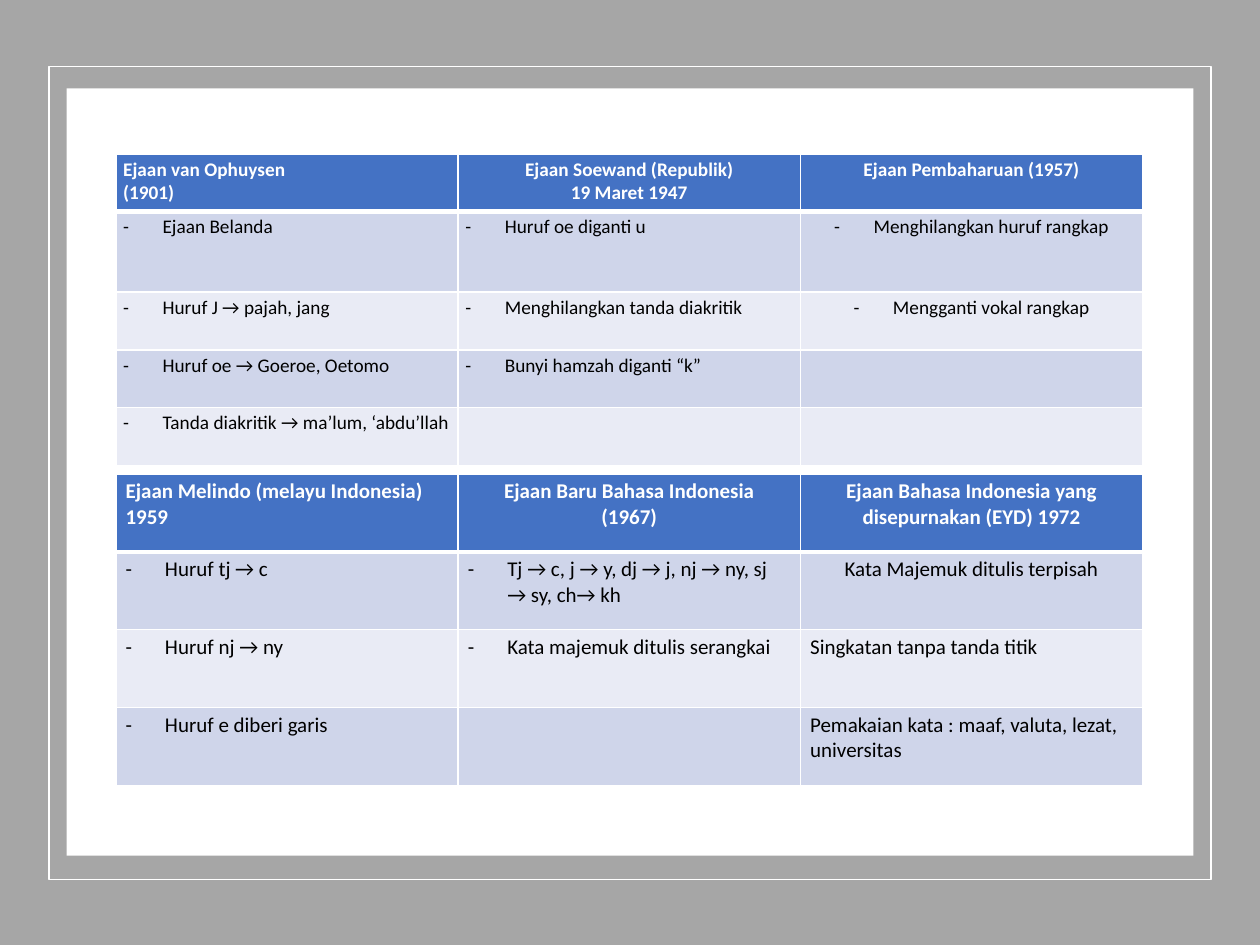
from dataclasses import dataclass

from lxml import etree
from pptx import Presentation
from pptx.dml.color import RGBColor
from pptx.enum.shapes import MSO_SHAPE
from pptx.enum.text import PP_ALIGN
from pptx.oxml.ns import qn
from pptx.util import Pt

RECT = MSO_SHAPE.RECTANGLE
LEFT, CENTER = PP_ALIGN.LEFT, PP_ALIGN.CENTER

COLORS = {
    "frame": "A6A6A6",
    "white": "FFFFFF",
    "header": "4472C4",
    "band_dark": "CFD5EA",
    "band_light": "E9EBF5",
    "text": "000000",
}
TABLE_LEFT, TABLE_WIDTH = 66.2, 586.8
INDENT = 22.5


@dataclass
class Panel:
    left: float
    top: float
    width: float
    height: float
    fill: str = ""
    line: str = ""


@dataclass
class Entry:
    text: str = ""
    align: PP_ALIGN = LEFT
    dash: bool = False


@dataclass
class SpellingTable:
    top: float
    size: float
    margin_x: float
    margin_y: float
    heights: list[float]
    rows: list[list[Entry]]


def dash(text: str, align: PP_ALIGN = LEFT) -> Entry:
    return Entry(text, align, True)


def rgb(name: str) -> RGBColor:
    return RGBColor.from_string(COLORS[name])


def draw_panel(s, panel: Panel) -> None:
    sp = s.shapes.add_shape(RECT, Pt(panel.left), Pt(panel.top),
                            Pt(panel.width), Pt(panel.height))
    sp.shadow.inherit = False
    if panel.fill:
        sp.fill.solid()
        sp.fill.fore_color.rgb = rgb(panel.fill)
    else:
        sp.fill.background()
    if panel.line:
        sp.line.color.rgb = rgb(panel.line)
        sp.line.width = Pt(1)
    else:
        sp.line.fill.background()


def set_borders(cell, top: float, bottom: float) -> None:
    tc_pr = cell._tc.get_or_add_tcPr()
    for side, width in {"L": 1, "R": 1, "T": top, "B": bottom}.items():
        ln = etree.SubElement(tc_pr, qn(f"a:ln{side}"), w=str(Pt(width)))
        fill = etree.SubElement(ln, qn("a:solidFill"))
        etree.SubElement(fill, qn("a:srgbClr"), val=COLORS["white"])


def add_dash(p) -> None:
    p_pr = p._p.get_or_add_pPr()
    p_pr.set("marL", str(Pt(INDENT)))
    p_pr.set("indent", str(-Pt(INDENT)))
    etree.SubElement(p_pr, qn("a:buFont"), typeface="Calibri")
    etree.SubElement(p_pr, qn("a:buChar"), char="-")


def write_entry(cell, entry: Entry, size: float, is_header: bool) -> None:
    tf = cell.text_frame
    font_format = {"name": "Calibri", "size": Pt(size), "bold": is_header}
    for i, line in enumerate(entry.text.split("\n")):
        p = tf.add_paragraph() if i else tf.paragraphs[0]
        p.alignment = entry.align
        if entry.dash:
            add_dash(p)
        if line:
            r = p.add_run()
            r.text = line
            for name, value in font_format.items():
                setattr(r.font, name, value)
            r.font.color.rgb = rgb("white" if is_header else "text")


def draw_table(s, spec_table: SpellingTable) -> None:
    rows, heights = spec_table.rows, spec_table.heights
    columns = len(rows[0])
    table = s.shapes.add_table(len(rows), columns, Pt(TABLE_LEFT), Pt(spec_table.top),
                               Pt(TABLE_WIDTH), Pt(sum(heights))).table
    for column in table.columns:
        column.width = Pt(TABLE_WIDTH / columns)
    margins = {
        "margin_left": Pt(spec_table.margin_x), "margin_right": Pt(spec_table.margin_x),
        "margin_top": Pt(spec_table.margin_y), "margin_bottom": Pt(spec_table.margin_y),
    }
    for i, (entries, height) in enumerate(zip(rows, heights)):
        table.rows[i].height = Pt(height)
        band = "header" if i == 0 else "band_dark" if i % 2 else "band_light"
        for j, entry in enumerate(entries):
            cell = table.cell(i, j)
            for name, value in margins.items():
                setattr(cell, name, value)
            set_borders(cell, 3 if i == 1 else 1, 3 if i == 0 else 1)
            cell.fill.solid()
            cell.fill.fore_color.rgb = rgb(band)
            write_entry(cell, entry, spec_table.size, i == 0)


PANELS = [
    Panel(0, 0, 720, 540, fill="frame"),
    Panel(28, 38, 664, 464.5, line="white"),
    Panel(38, 50.5, 644, 438.5, fill="white"),
]

LATER_SPELLINGS = SpellingTable(270.9, 12, 5.6, 2.8, [44.5] * 4, [
    [Entry("Ejaan Melindo (melayu Indonesia) 1959"),
     Entry("Ejaan Baru Bahasa Indonesia\n(1967)", CENTER),
     Entry("Ejaan Bahasa Indonesia yang disepurnakan (EYD) 1972", CENTER)],
    [dash("Huruf tj → c"),
     dash("Tj → c, j → y, dj → j, nj → ny, sj → sy, ch→ kh"),
     Entry("Kata Majemuk ditulis terpisah", CENTER)],
    [dash("Huruf nj → ny"),
     dash("Kata majemuk ditulis serangkai"),
     Entry("Singkatan tanpa tanda titik")],
    [dash("Huruf e diberi garis"),
     Entry(),
     Entry("Pemakaian kata : maaf, valuta, lezat, universitas")],
])

EARLY_SPELLINGS = SpellingTable(88, 11, 4.2, 2.1, [33, 46, 33, 33, 33], [
    [Entry("Ejaan van Ophuysen\n(1901)"),
     Entry("Ejaan Soewand (Republik)\n19 Maret 1947", CENTER),
     Entry("Ejaan Pembaharuan (1957)", CENTER)],
    [dash("Ejaan Belanda"),
     dash("Huruf oe diganti u"),
     dash("Menghilangkan huruf rangkap", CENTER)],
    [dash("Huruf J → pajah, jang"),
     dash("Menghilangkan tanda diakritik"),
     dash("Mengganti vokal rangkap", CENTER)],
    [dash("Huruf oe → Goeroe, Oetomo"),
     dash("Bunyi hamzah diganti “k”"),
     Entry()],
    [dash("Tanda diakritik → ma’lum, ‘abdu’llah"), Entry(), Entry()],
])


def main() -> None:
    prs = Presentation()
    prs.slide_width, prs.slide_height = Pt(720), Pt(540)
    s = prs.slides.add_slide(prs.slide_layouts[6])
    for panel in PANELS:
        draw_panel(s, panel)
    for spelling_table in (LATER_SPELLINGS, EARLY_SPELLINGS):
        draw_table(s, spelling_table)
    prs.save("out.pptx")


if __name__ == "__main__":
    main()
